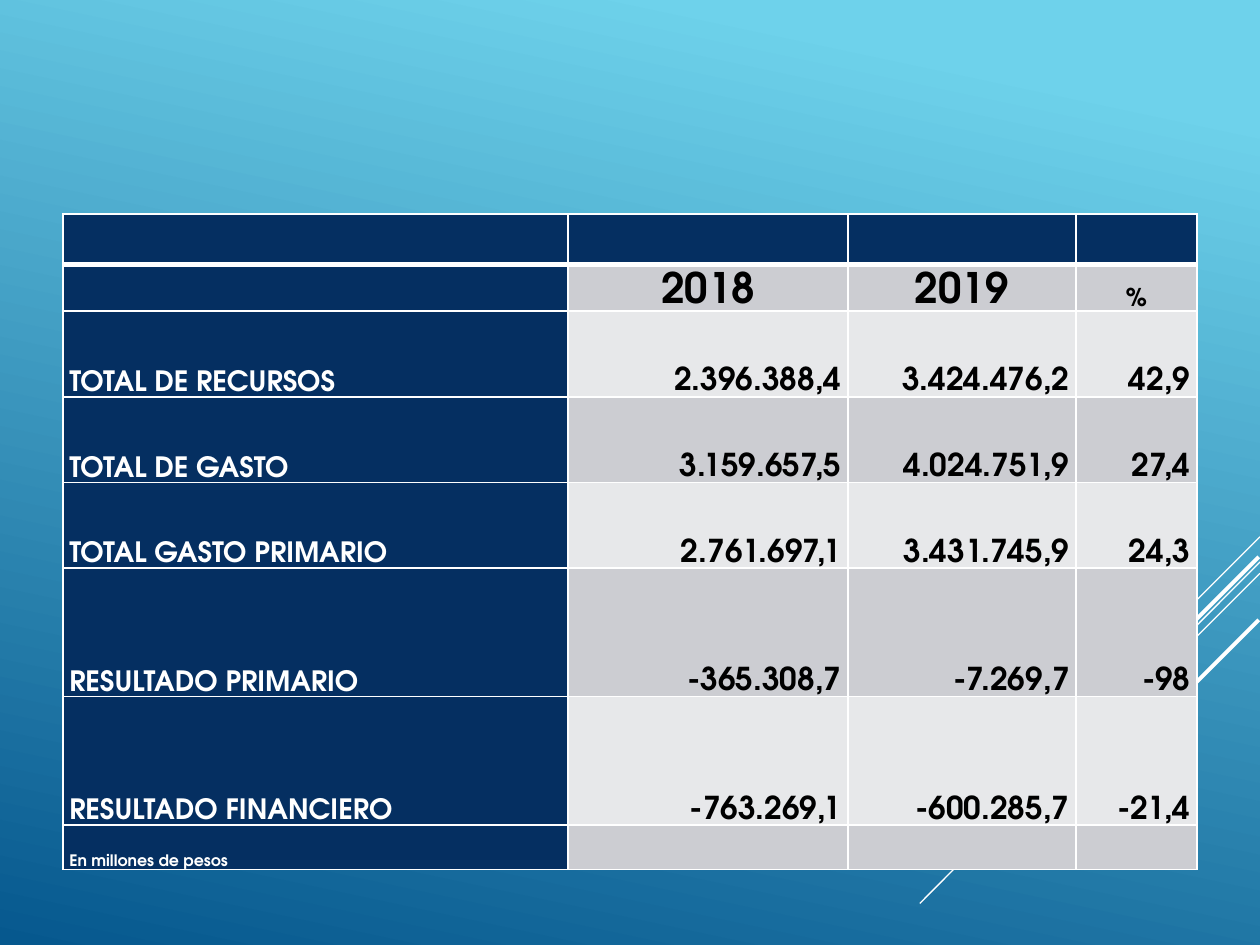
from lxml.etree import SubElement
from pptx import Presentation
from pptx.dml.color import RGBColor
from pptx.enum.shapes import MSO_CONNECTOR
from pptx.enum.text import MSO_ANCHOR, PP_ALIGN
from pptx.oxml.ns import qn
from pptx.util import Inches, Pt

FONT = "TeX Gyre Adventor"
COLORS = {
    "sky": "6ED2EB",
    "deep": "06588E",
    "navy": "052F61",
    "band_dark": "CCCDD2",
    "band_light": "E7E8EA",
    "white": "FFFFFF",
    "black": "000000",
}
COLUMN_WIDTHS = [4.01, 2.22, 1.81, 0.96]
ROW_HEIGHTS = [0.4, 0.37, 0.68, 0.68, 0.68, 1.02, 1.02, 0.35]
BUDGET = [
    ["", "", "", ""],
    ["", "2018", "2019", "%"],
    ["TOTAL DE RECURSOS", "2.396.388,4", "3.424.476,2", "42,9"],
    ["TOTAL DE GASTO", "3.159.657,5", "4.024.751,9", "27,4"],
    ["TOTAL GASTO PRIMARIO", "2.761.697,1", "3.431.745,9", "24,3"],
    ["RESULTADO PRIMARIO", "-365.308,7", "-7.269,7", "-98"],
    ["RESULTADO FINANCIERO", "-763.269,1", "-600.285,7", "-21,4"],
    ["En millones de pesos", "", "", ""],
]
YEAR_ROW = 1
NOTE_ROW = len(BUDGET) - 1
# Start x, start y, end x, end y, width in points
RAYS = [
    (10, 4.26, 9.17, 5.09, 0.75),
    (10, 4.46, 7.3, 7.17, 0.75),
    (10, 4.55, 8.28, 6.27, 0.75),
    (9.99, 4.42, 8.42, 5.99, 2.25),
    (9.99, 4.92, 8.85, 6.06, 2.25),
]


def color(name):
    return RGBColor.from_string(COLORS[name])


def paint_background(slide):
    fill = slide.background.fill
    fill.gradient()
    fill.gradient_angle = 258
    for stop, name, position in zip(fill.gradient_stops, ("sky", "deep"), (0.1, 1)):
        stop.color.rgb = color(name)
        stop.position = position


def add_rays(slide):
    """Draw the diagonal lines in the lower right corner."""
    for x1, y1, x2, y2, width in RAYS:
        ray = slide.shapes.add_connector(
            MSO_CONNECTOR.STRAIGHT, Inches(x1), Inches(y1), Inches(x2), Inches(y2))
        ray.line.color.rgb = color("white")
        ray.line.width = Pt(width)
        SubElement(ray._element.spPr, qn("a:effectLst"))


def set_borders(cell, top=1, bottom=1):
    properties = cell._tc.get_or_add_tcPr()
    for side, width in (("L", 1), ("R", 1), ("T", top), ("B", bottom)):
        border = SubElement(properties, qn(f"a:ln{side}"), w=str(Pt(width)))
        solid = SubElement(border, qn("a:solidFill"))
        SubElement(solid, qn("a:srgbClr"), val=COLORS["white"])


def cell_style(row, column):
    """Return fill, font colour, size and alignment for a table position."""
    if row == 0 or column == 0:
        size = 9 if row == NOTE_ROW else 16
        alignment = PP_ALIGN.JUSTIFY if row == NOTE_ROW else PP_ALIGN.LEFT
        return "navy", "white", size, alignment
    fill = "band_dark" if row % 2 else "band_light"
    if row == YEAR_ROW:
        return fill, "black", 14 if column == 3 else 24, PP_ALIGN.CENTER
    if row == NOTE_ROW:
        fill = "band_dark"
    return fill, "black", 18, PP_ALIGN.RIGHT


def format_cell(cell, row, column, wording):
    fill, font_color, size, alignment = cell_style(row, column)
    set_borders(cell, top=3 if row == 1 else 1, bottom=3 if row == 0 else 1)
    cell.fill.solid()
    cell.fill.fore_color.rgb = color(fill)
    cell.vertical_anchor = MSO_ANCHOR.BOTTOM
    cell.margin_left = cell.margin_right = Inches(0.05)
    cell.margin_top = cell.margin_bottom = 0
    paragraph = cell.text_frame.paragraphs[0]
    paragraph.text = wording
    paragraph.alignment = alignment
    paragraph.line_spacing = 1.07
    for run in paragraph.runs:
        run.font.name = FONT
        run.font.size = Pt(size)
        run.font.bold = True
        run.font.color.rgb = color(font_color)


def add_budget_table(slide, left, top, width, height):
    table = slide.shapes.add_table(
        len(BUDGET), len(COLUMN_WIDTHS), left, top, width, height).table
    table.first_row = table.horz_banding = False
    for column, share in zip(table.columns, COLUMN_WIDTHS):
        column.width = int(width * share / sum(COLUMN_WIDTHS))
    for row, share in zip(table.rows, ROW_HEIGHTS):
        row.height = int(height * share / sum(ROW_HEIGHTS))
    for r, wordings in enumerate(BUDGET):
        for c, wording in enumerate(wordings):
            format_cell(table.cell(r, c), r, c, wording)


def main():
    presentation = Presentation()
    presentation.slide_width = Inches(10)
    presentation.slide_height = Inches(7.5)
    slide = presentation.slides.add_slide(presentation.slide_layouts[6])
    paint_background(slide)
    add_rays(slide)
    add_budget_table(slide, Inches(0.5), Inches(1.7), Inches(9), Inches(5.2))
    presentation.save("out.pptx")


if __name__ == "__main__":
    main()
